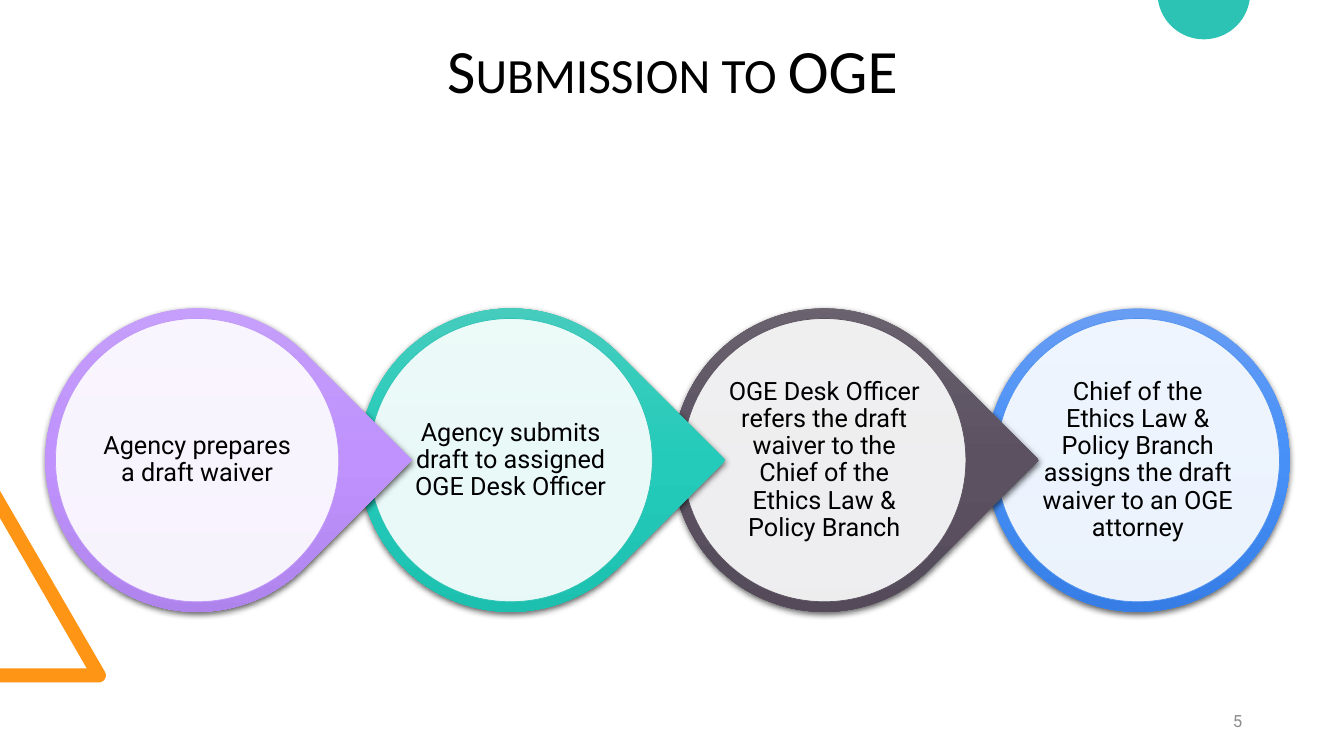
from math import asin, cos, degrees, radians, sin

from lxml.etree import SubElement
from pptx import Presentation
from pptx.dml.color import RGBColor
from pptx.enum.shapes import MSO_SHAPE
from pptx.enum.text import MSO_ANCHOR, PP_ALIGN
from pptx.oxml.ns import qn
from pptx.util import Inches, Pt

# Grid of the process chain, in inches
CHAIN_LEFT, CHAIN_TOP = 0.45, 3.06
STEP_PITCH, STEP_SIZE = 3.11, 3.01
DISC_INSET, TEXT_INSET = 0.1, 0.5

# Wording, gradient from top to bottom, disc outline
STEPS = [
    ("Agency prepares a draft waiver", ("C8A5FA", "BF92FD", "A97EE5"), "C097F8"),
    ("Agency submits draft to assigned OGE Desk Officer",
     ("53CDBF", "24CBBA", "1ABBAB"), "2CC3B4"),
    ("OGE Desk Officer refers the draft waiver to the Chief of the Ethics Law & Policy Branch",
     ("706A74", "5B5161", "514857"), "5B5260"),
    ("Chief of the Ethics Law & Policy Branch assigns the draft waiver to an OGE attorney",
     ("689DF4", "4690F8", "367EE5"), "4E91F0"),
]


def color(hex_string):
    return RGBColor.from_string(hex_string)


def place(shape, left, top, width, height):
    shape.left, shape.top = Inches(left), Inches(top)
    shape.width, shape.height = Inches(width), Inches(height)


def arc(center_x, center_y, radius, start, end, steps=32):
    """Points along a circle, with angles in degrees clockwise from the right."""
    angles = [radians(start + (end - start) * i / steps) for i in range(steps + 1)]
    return [(center_x + radius * cos(a), center_y + radius * sin(a)) for a in angles]


def add_outline(slide, points, fill):
    corners = [(Inches(x), Inches(y)) for x, y in points]
    builder = slide.shapes.build_freeform(*corners[0])
    builder.add_line_segments(corners[1:], close=True)
    shape = builder.convert_to_shape()
    shape.fill.solid()
    shape.fill.fore_color.rgb = color(fill)
    shape.line.fill.background()
    shape.shadow.inherit = False


def write(shape, text, size, font, hex_color, align, spacing=1.0, margin=None):
    frame = shape.text_frame
    frame.word_wrap = True
    frame.vertical_anchor = MSO_ANCHOR.MIDDLE
    if margin is not None:
        frame.margin_left = frame.margin_right = Inches(margin)
        frame.margin_top = frame.margin_bottom = Inches(margin)
    paragraph = frame.paragraphs[0]
    paragraph.alignment = align
    paragraph.line_spacing = spacing
    run = paragraph.add_run()
    run.text = text
    run.font.size = Pt(size)
    run.font.name = font
    run.font.color.rgb = color(hex_color)
    return run


def add_text_box(slide, box, *text_format, **options):
    shape = slide.shapes.add_textbox(*map(Inches, box))
    write(shape, *text_format, **options)


def set_vertical_gradient(shape, hex_colors):
    shape.fill.gradient()
    gradient = shape.element.spPr.find(qn("a:gradFill"))
    gradient.set("rotWithShape", "0")
    for child in list(gradient):
        gradient.remove(child)
    stops = SubElement(gradient, qn("a:gsLst"))
    for index, hex_color in enumerate(hex_colors):
        stop = SubElement(stops, qn("a:gs"), pos=str(index * 50000))
        SubElement(stop, qn("a:srgbClr"), val=hex_color)
    SubElement(gradient, qn("a:lin"), ang="5400000", scaled="0")


def set_shadow(shape):
    shape.shadow.inherit = False
    effects = shape.element.spPr.find(qn("a:effectLst"))
    shadow = SubElement(effects, qn("a:outerShdw"), blurRad=str(Pt(4.5)),
                        dist=str(Pt(1.5)), dir="5400000", rotWithShape="0")
    shadow_color = SubElement(shadow, qn("a:srgbClr"), val="000000")
    SubElement(shadow_color, qn("a:alpha"), val="63000")


def square(left, inset):
    side = STEP_SIZE - 2 * inset
    return left + inset, CHAIN_TOP + inset, side, side


def add_step(slide, index, text, gradient, outline):
    left = CHAIN_LEFT + index * STEP_PITCH
    is_last = index == len(STEPS) - 1

    # Pointed ring; the last step is a plain circle
    preset = MSO_SHAPE.OVAL if is_last else MSO_SHAPE.TEAR
    ring = slide.shapes.add_shape(preset, *map(Inches, square(left, 0)))
    ring.rotation = 0 if is_last else 45
    set_vertical_gradient(ring, gradient)
    ring.line.fill.background()
    set_shadow(ring)

    # Translucent disc
    disc = slide.shapes.add_shape(MSO_SHAPE.OVAL, *map(Inches, square(left, DISC_INSET)))
    disc.fill.solid()
    disc.fill.fore_color.rgb = color("FFFFFF")
    white = disc.element.spPr.find(qn("a:solidFill"))[0]
    SubElement(white, qn("a:alpha"), val="90000")
    disc.line.color.rgb = color(outline)
    disc.line.width = Pt(0.5)
    disc.shadow.inherit = False

    add_text_box(slide, square(left, TEXT_INSET), text, 18, "Roboto", "000000",
                 PP_ALIGN.CENTER, spacing=0.9, margin=0.03)


def add_decorations(slide):
    # Triangle band with a rounded corner, cut by the left edge
    corner = arc(0.98, 6.7, 0.07, -30, 90, steps=12)
    band = [(0, 6.77), (0, 6.63), (0.86, 6.63), (0, 5.14), (0, 4.87)]
    add_outline(slide, band + corner, "FF9514")

    # Circle cut by the top edge
    radius, rise = 0.46, 0.07
    cut = degrees(asin(rise / radius))
    add_outline(slide, arc(11.94, -rise, radius, cut, 180 - cut), "2CC3B4")


def main():
    presentation = Presentation()
    presentation.slide_width = Inches(13.33)
    presentation.slide_height = Inches(7.5)
    slide = presentation.slides.add_slide(presentation.slide_layouts[5])

    add_decorations(slide)

    # Title
    title = slide.shapes.title
    place(title, 0.92, 0, 11.5, 1.45)
    run = write(title, "Submission to OGE", 44, "Calibri", "000000",
                PP_ALIGN.CENTER, spacing=0.9)
    run.font._element.set("cap", "small")

    # Slide number
    add_text_box(slide, (9.42, 6.95, 3, 0.4), "5", 12, "Roboto", "8C8C8C", PP_ALIGN.RIGHT)

    # Chain, drawn from the last step so that each point overlaps the next ring
    for index, step in reversed(list(enumerate(STEPS))):
        add_step(slide, index, *step)

    presentation.save("out.pptx")


if __name__ == "__main__":
    main()
